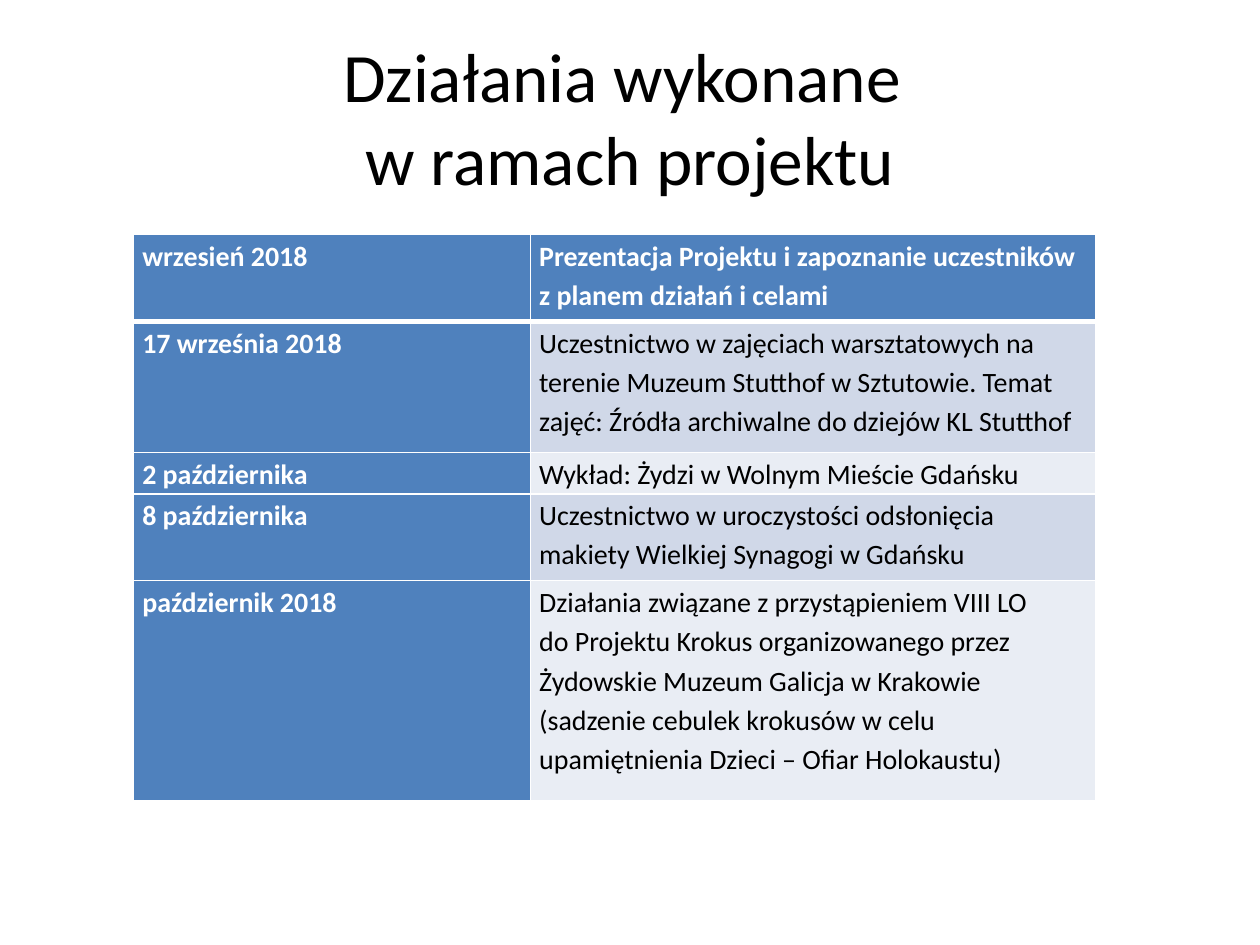
from dataclasses import dataclass

from lxml import etree
from pptx import Presentation
from pptx.dml.color import RGBColor
from pptx.enum.text import MSO_ANCHOR, PP_ALIGN
from pptx.oxml.ns import qn
from pptx.table import _Cell
from pptx.text.text import TextFrame
from pptx.util import Inches, Pt

CENTER = PP_ALIGN.CENTER
LEFT = PP_ALIGN.LEFT
MIDDLE = MSO_ANCHOR.MIDDLE
TOP = MSO_ANCHOR.TOP

BLACK = RGBColor(0x00, 0x00, 0x00)
WHITE = RGBColor(0xFF, 0xFF, 0xFF)
BLUE = RGBColor(0x4F, 0x81, 0xBD)
BAND_DARK = RGBColor(0xD0, 0xD8, 0xE8)
BAND_LIGHT = RGBColor(0xE9, 0xED, 0xF4)

FONT = "Calibri"
COLUMN_WIDTHS = (3.15, 4.49)


@dataclass(frozen=True)
class Activity:
    date: str
    description: str
    height: float


ACTIVITIES = (
    Activity("wrzesień 2018",
             "Prezentacja Projektu i zapoznanie uczestników z planem działań i celami", 0.69),
    Activity("17 września 2018",
             "Uczestnictwo w zajęciach warsztatowych na terenie Muzeum Stutthof w Sztutowie. "
             "Temat zajęć: Źródła archiwalne do dziejów KL Stutthof", 1.04),
    Activity("2 października", "Wykład: Żydzi w Wolnym Mieście Gdańsku", 0.33),
    Activity("8 października",
             "Uczestnictwo w uroczystości odsłonięcia makiety Wielkiej Synagogi w Gdańsku", 0.69),
    Activity("październik 2018",
             "Działania związane z przystąpieniem VIII LO\n"
             "do Projektu Krokus organizowanego przez Żydowskie Muzeum Galicja w Krakowie "
             "(sadzenie cebulek krokusów w celu upamiętnienia Dzieci – Ofiar Holokaustu)", 1.75),
)


def write_text(frame: TextFrame, text: str, *, size: float, color: RGBColor,
               bold: bool = False, align: PP_ALIGN = LEFT, spacing: float = 1.0) -> None:
    """Fill the frame; a newline starts a paragraph, a vertical tab a line."""
    frame.word_wrap = True
    frame.text = text
    for paragraph in frame.paragraphs:
        paragraph.alignment = align
        paragraph.line_spacing = spacing
        for run in paragraph.runs:
            run.font.name = FONT
            run.font.size = Pt(size)
            run.font.bold = bold
            run.font.color.rgb = color


def set_borders(cell: _Cell, bottom: float, top: float) -> None:
    """Draw white cell borders, with widths in points."""
    properties = cell._tc.get_or_add_tcPr()
    widths = {"a:lnL": 1, "a:lnR": 1, "a:lnT": top, "a:lnB": bottom}
    for position, (tag, width) in enumerate(widths.items()):
        line = etree.Element(qn(tag), w=str(Pt(width)))
        fill = etree.SubElement(line, qn("a:solidFill"))
        etree.SubElement(fill, qn("a:srgbClr"), val=str(WHITE))
        properties.insert(position, line)


def fill_cell(cell: _Cell, text: str, fill: RGBColor, row: int) -> None:
    on_blue = fill == BLUE
    cell.margin_left = cell.margin_right = Inches(0.07)
    cell.margin_top = cell.margin_bottom = 0
    cell.vertical_anchor = TOP
    cell.fill.solid()
    cell.fill.fore_color.rgb = fill
    write_text(cell.text_frame, text, size=16, color=WHITE if on_blue else BLACK,
               bold=on_blue, spacing=1.15)
    set_borders(cell, bottom=3 if row == 0 else 1, top=3 if row == 1 else 1)


def add_title(slide) -> None:
    title = slide.shapes.add_textbox(Inches(0.5), Inches(0.3), Inches(9), Inches(1.25))
    title.text_frame.vertical_anchor = MIDDLE
    write_text(title.text_frame, "Działania wykonane \vw ramach projektu",
               size=39.6, color=BLACK, align=CENTER)


def add_schedule(slide) -> None:
    height = sum(activity.height for activity in ACTIVITIES)
    schedule = slide.shapes.add_table(
        len(ACTIVITIES), len(COLUMN_WIDTHS), Inches(1.06), Inches(1.86),
        Inches(sum(COLUMN_WIDTHS)), Inches(height)).table
    schedule.first_col = True
    for column, width in zip(schedule.columns, COLUMN_WIDTHS):
        column.width = Inches(width)
    for row, activity in enumerate(ACTIVITIES):
        schedule.rows[row].height = Inches(activity.height)
        band = BLUE if row == 0 else BAND_DARK if row % 2 else BAND_LIGHT
        fill_cell(schedule.cell(row, 0), activity.date, BLUE, row)
        fill_cell(schedule.cell(row, 1), activity.description, band, row)


def main() -> None:
    presentation = Presentation()
    presentation.slide_width = Inches(10)
    presentation.slide_height = Inches(7.5)
    slide = presentation.slides.add_slide(presentation.slide_layouts[6])
    add_title(slide)
    add_schedule(slide)
    presentation.save("out.pptx")


if __name__ == "__main__":
    main()
